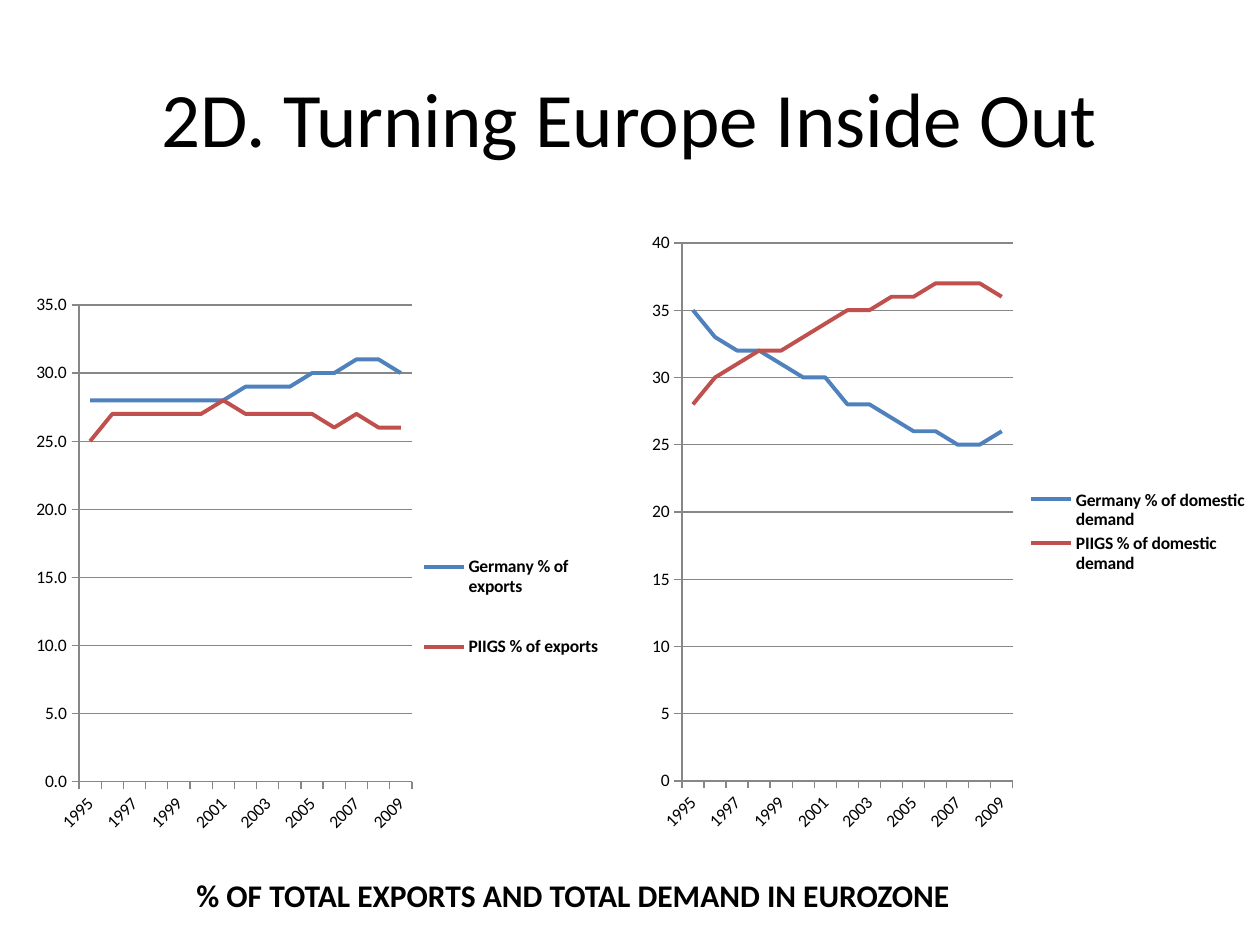
from lxml.etree import SubElement
from pptx import Presentation
from pptx.chart.data import CategoryChartData
from pptx.dml.color import RGBColor
from pptx.enum.chart import XL_CHART_TYPE as CT, XL_LEGEND_POSITION as LP, XL_TICK_MARK as TM
from pptx.enum.text import MSO_ANCHOR, PP_ALIGN
from pptx.oxml.ns import qn
from pptx.util import Emu, Pt

PX = 914400 // 126
FONT = "Calibri"
COLORS = {"text": "000000", "axis": "878787", "germany": "4F81BD", "piigs": "C0504D"}
YEARS = [str(y) for y in range(1995, 2010)]
EXPORTS = {
    "Germany % of exports": (28, 28, 28, 28, 28, 28, 28, 29, 29, 29, 30, 30, 31, 31, 30),
    "PIIGS % of exports": (25, 27, 27, 27, 27, 27, 28, 27, 27, 27, 27, 26, 27, 26, 26),
}
DEMAND = {
    "Germany % of domestic demand": (35, 33, 32, 32, 31, 30, 30, 28, 28, 27, 26, 26, 25, 25, 26),
    "PIIGS % of domestic demand": (28, 30, 31, 32, 32, 33, 34, 35, 35, 36, 36, 37, 37, 37, 36),
}


def rgb(name):
    """Return the named colour."""
    return RGBColor.from_string(COLORS[name])


def box(*px):
    """Turn pixel lengths into EMU."""
    return [Emu(v * PX) for v in px]


def style_font(font, size, bold=False):
    """Apply the slide's font at a given size."""
    font.name, font.size, font.bold = FONT, Pt(size), bold
    font.color.rgb = rgb("text")


def add_title(s, text, *area):
    """Place and format the title placeholder."""
    sp = s.shapes.title
    sp.left, sp.top, sp.width, sp.height = box(*area)
    tf = sp.text_frame
    tf.text = text
    tf.vertical_anchor = MSO_ANCHOR.MIDDLE
    p = tf.paragraphs[0]
    p.alignment = PP_ALIGN.CENTER
    style_font(p.font, 44)


def add_caption(s, text, *area):
    """Add the bold caption under the charts."""
    tf = s.shapes.add_textbox(*box(*area)).text_frame
    tf.word_wrap = True
    tf.text = text
    style_font(tf.paragraphs[0].font, 18, True)


def manual_layout(area, frame, inner=False):
    """Fill a new layout element from a slide area within a chart frame."""
    def fill(layout):
        ml = SubElement(layout, qn("c:manualLayout"))
        if inner:
            SubElement(ml, qn("c:layoutTarget")).set("val", "inner")
        for tag in ("xMode", "yMode"):
            SubElement(ml, qn(f"c:{tag}")).set("val", "edge")
        x, y, w, h = area
        left, top, width, height = frame
        shares = ((x - left) / width, (y - top) / height, w / width, h / height)
        for tag, share in zip("xywh", shares):
            SubElement(ml, qn(f"c:{tag}")).set("val", f"{share:.4f}")
    return fill


def set_layout(parent, index, fill):
    """Replace the layout element of a chart part."""
    for old in parent.findall(qn("c:layout")):
        parent.remove(old)
    layout = SubElement(parent, qn("c:layout"))
    parent.insert(index, layout)
    fill(layout)


def style_axes(chart, top, step, number_format):
    """Format both axes and the gridlines."""
    cat, val = chart.category_axis, chart.value_axis
    val.minimum_scale, val.maximum_scale, val.major_unit = 0, top, step
    val.has_major_gridlines = True
    labels = val.tick_labels
    labels.number_format, labels.number_format_is_linked = number_format, False
    for axis in (cat, val):
        axis.major_tick_mark = TM.OUTSIDE
        style_font(axis.tick_labels.font, 10)
    for line in (cat.format.line, val.format.line, val.major_gridlines.format.line):
        line.color.rgb, line.width = rgb("axis"), Pt(0.75)
    cat_xml = chart.element.find(".//" + qn("c:catAx"))
    cat_xml.find(qn("c:txPr")).find(qn("a:bodyPr")).set("rot", "-2700000")
    skip = cat_xml.makeelement(qn("c:tickLblSkip"), {"val": "2"})
    cat_xml.find(qn("c:noMultiLvlLbl")).addprevious(skip)


def add_line_chart(s, series, frame, plot, legend, top, number_format):
    """Add a line chart with its legend on the right."""
    data = CategoryChartData()
    data.categories = YEARS
    for name, values in series.items():
        data.add_series(name, values)
    chart = s.shapes.add_chart(CT.LINE, *box(*frame), data).chart
    chart.has_title = False
    style_font(chart.font, 10)
    for ser, color in zip(chart.plots[0].series, ("germany", "piigs")):
        ser.smooth = False
        ser.format.line.color.rgb, ser.format.line.width = rgb(color), Pt(2.25)
    chart.plots[0].vary_by_categories = False
    style_axes(chart, top, 5, number_format)
    chart.has_legend = True
    chart.legend.position = LP.RIGHT
    chart.legend.include_in_layout = False
    style_font(chart.legend.font, 10, True)
    set_layout(chart.element.find(".//" + qn("c:plotArea")), 0, manual_layout(plot, frame, True))
    set_layout(chart.element.find(".//" + qn("c:legend")), 1, manual_layout(legend, frame))


def main():
    """Build and save the slide."""
    prs = Presentation()
    prs.slide_width, prs.slide_height = box(1260, 945)
    s = prs.slides.add_slide(prs.slide_layouts[5])
    add_title(s, "2D. Turning Europe Inside Out", 63, 38, 1134, 157)
    add_line_chart(s, EXPORTS, (25, 283, 595, 561), (79, 305, 333, 477),
                   (413, 517, 196, 180), 35, "#,##0.0")
    add_line_chart(s, DEMAND, (640, 220, 620, 624), (682, 243, 331, 538),
                   (1023, 486, 230, 92), 40, "General")
    add_caption(s, "% OF TOTAL EXPORTS AND TOTAL DEMAND IN EUROZONE", 184, 870, 903, 50)
    prs.save("out.pptx")


if __name__ == "__main__":
    main()
